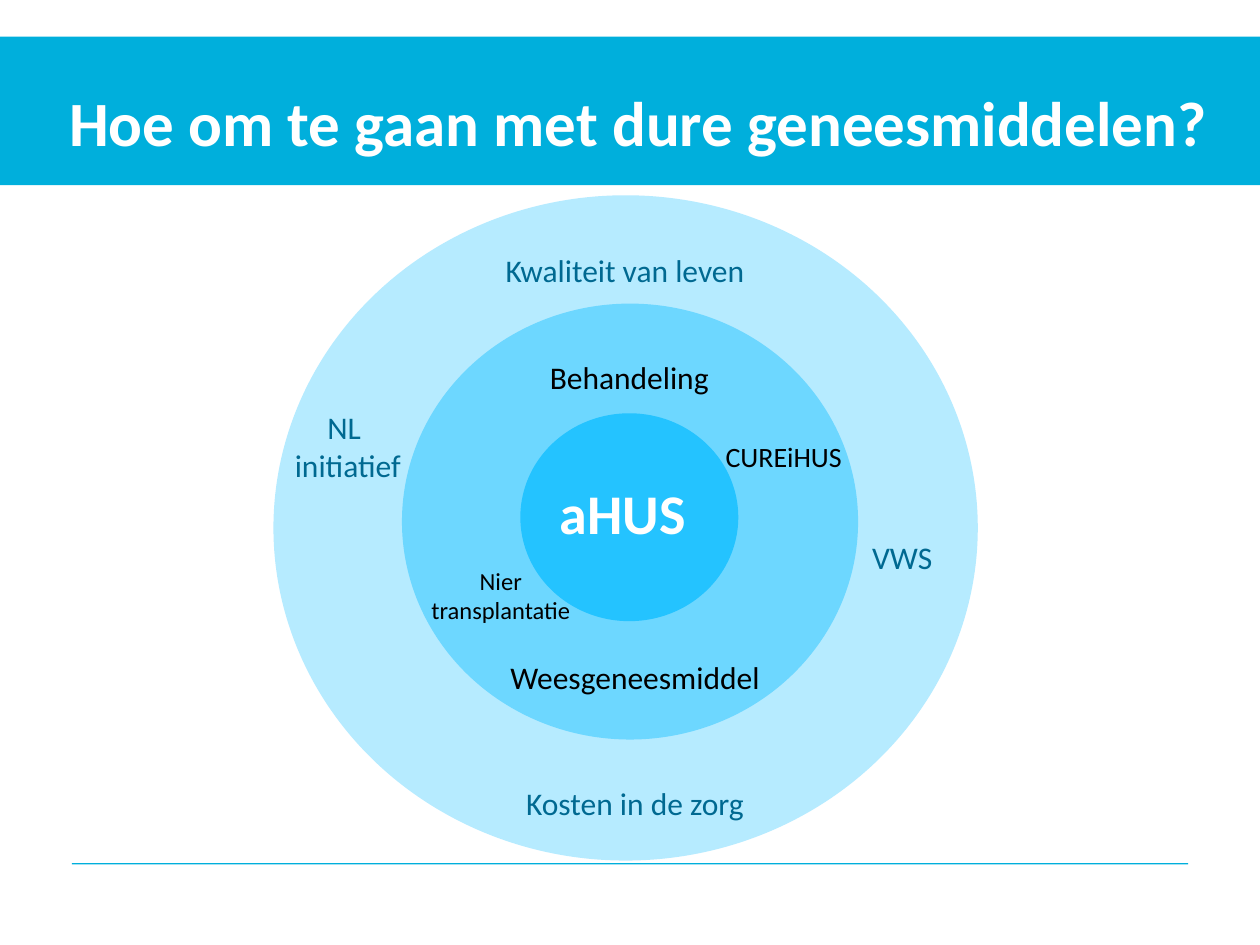
import pptx
import pptx.util
import pptx.dml.color
import pptx.enum.shapes
import pptx.enum.text

Inches = pptx.util.Inches
Shapes = pptx.enum.shapes.MSO_SHAPE
TextEnum = pptx.enum.text

WHITE, BLACK, BAND_BLUE, OUTER_TEXT = "FFFFFF", "000000", "00AFDC", "006991"

RINGS = [
    ((2.17, 1.55, 5.59, 5.28), "B6EBFF"),
    ((3.19, 2.41, 3.62, 3.46), "6DD7FF"),
    ((4.13, 3.28, 1.73, 1.65), "24C3FF"),
]

LABELS = [
    (["aHUS "], (4.21, 3.75, 1.57, 0.64), 32, WHITE, True),
    (["Behandeling"], (4.21, 2.79, 1.57, 0.4), 18, BLACK, False),
    (["Kosten in de zorg"], (3.82, 6.17, 2.44, 0.4), 18, OUTER_TEXT, False),
    (["Weesgeneesmiddel"], (3.9, 5.17, 2.28, 0.4), 18, BLACK, False),
    (["Kwaliteit van leven"], (3.74, 1.94, 2.44, 0.4), 18, OUTER_TEXT, False),
    (["CUREiHUS"], (5.08, 3.44, 2.28, 0.37), 16, BLACK, False),
    (["Nier", "transplantatie"], (3.19, 4.44, 1.57, 0.57), 14, BLACK, False),
    (["VWS"], (5.94, 4.22, 2.44, 0.4), 18, OUTER_TEXT, False),
    (["NL ", "initiatief"], (1.54, 3.19, 2.44, 0.71), 18, OUTER_TEXT, False),
]


def rgb(hex_code):
    return pptx.dml.color.RGBColor.from_string(hex_code)


def set_attributes(target, values):
    for attribute, value in values.items():
        setattr(target, attribute, value)


def add_filled(slide, geometry, box, hex_code):
    area = slide.shapes.add_shape(geometry, *map(Inches, box))
    area.shadow.inherit = False
    area.fill.solid()
    area.fill.fore_color.rgb = rgb(hex_code)
    area.line.fill.background()


def add_label(slide, lines, box, size, hex_code, bold):
    frame = slide.shapes.add_textbox(*map(Inches, box)).text_frame
    set_attributes(frame, {
        "text": "\n".join(lines),
        "word_wrap": True,
        "auto_size": TextEnum.MSO_AUTO_SIZE.SHAPE_TO_FIT_TEXT,
    })
    for paragraph in frame.paragraphs:
        paragraph.alignment = TextEnum.PP_ALIGN.CENTER
        set_attributes(paragraph.font, {
            "name": "Calibri", "size": pptx.util.Pt(size), "bold": bold,
        })
        paragraph.font.color.rgb = rgb(hex_code)
    return frame


def add_rings(slide, box):
    left, top = box[:2]
    offset_x, offset_y = left - RINGS[0][0][0], top - RINGS[0][0][1]

    def place(part):
        return part[0] + offset_x, part[1] + offset_y, part[2], part[3]

    for ring, hex_code in RINGS:
        add_filled(slide, Shapes.OVAL, place(ring), hex_code)
    for lines, label_box, size, hex_code, bold in LABELS:
        add_label(slide, lines, place(label_box), size, hex_code, bold)


def add_title_band(slide, box):
    left, top, width, height = box
    add_filled(slide, Shapes.RECTANGLE, box, BAND_BLUE)
    title = add_label(
        slide, ["Hoe om te gaan met dure geneesmiddelen?"],
        (left + 0.04, top + 0.39, width + 0.05, 0.58), 36, WHITE, True)
    set_attributes(title, {
        "auto_size": TextEnum.MSO_AUTO_SIZE.NONE,
        "vertical_anchor": TextEnum.MSO_ANCHOR.MIDDLE,
        "margin_left": 0, "margin_top": 0,
        "margin_right": 0, "margin_bottom": 0,
    })
    title.paragraphs[0].line_spacing = pptx.util.Pt(42)


def add_footer_rule(slide, box):
    add_filled(slide, Shapes.RECTANGLE, box, BAND_BLUE)


def main():
    deck = pptx.Presentation()
    set_attributes(deck, {"slide_width": Inches(10), "slide_height": Inches(7.5)})
    slide = deck.slides.add_slide(deck.slide_layouts[6])
    add_footer_rule(slide, (0.57, 6.85, 8.86, 0.01))
    add_rings(slide, RINGS[0][0])
    add_title_band(slide, (0, 0.29, 10, 1.18))
    deck.save("out.pptx")


if __name__ == "__main__":
    main()
